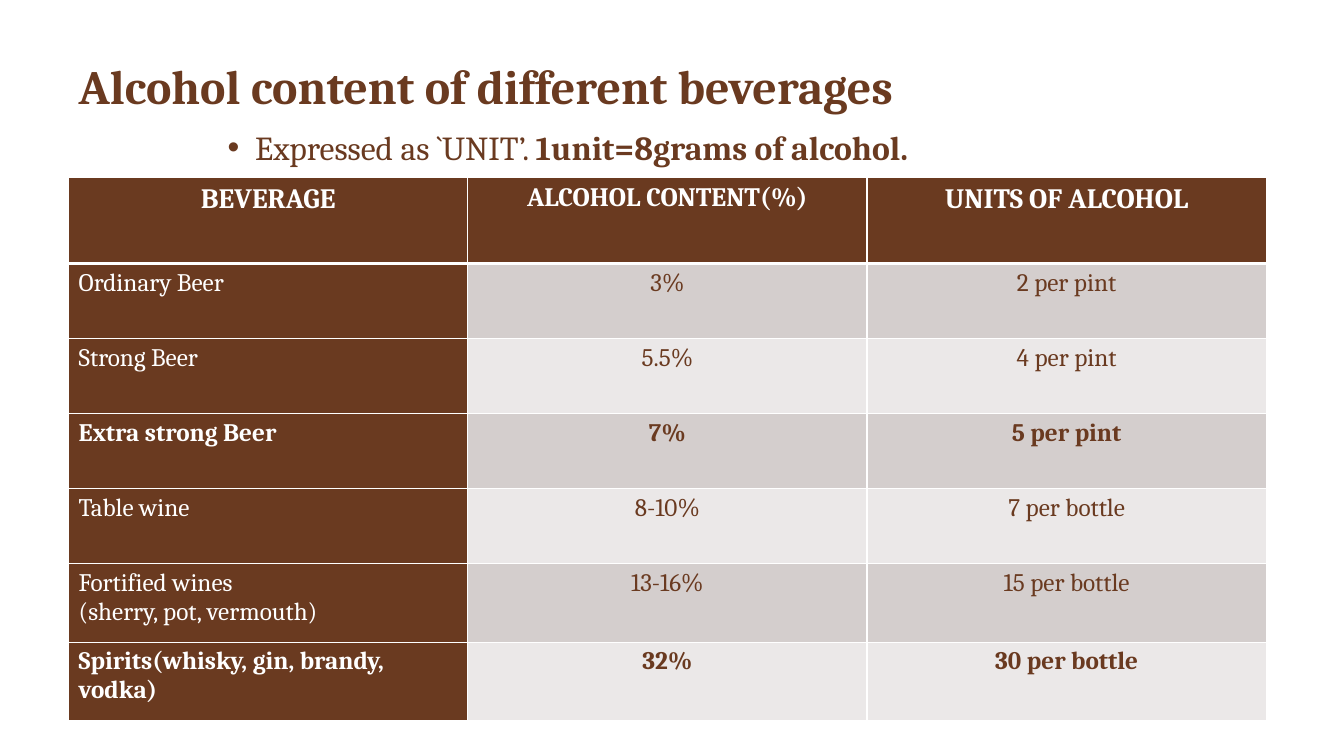
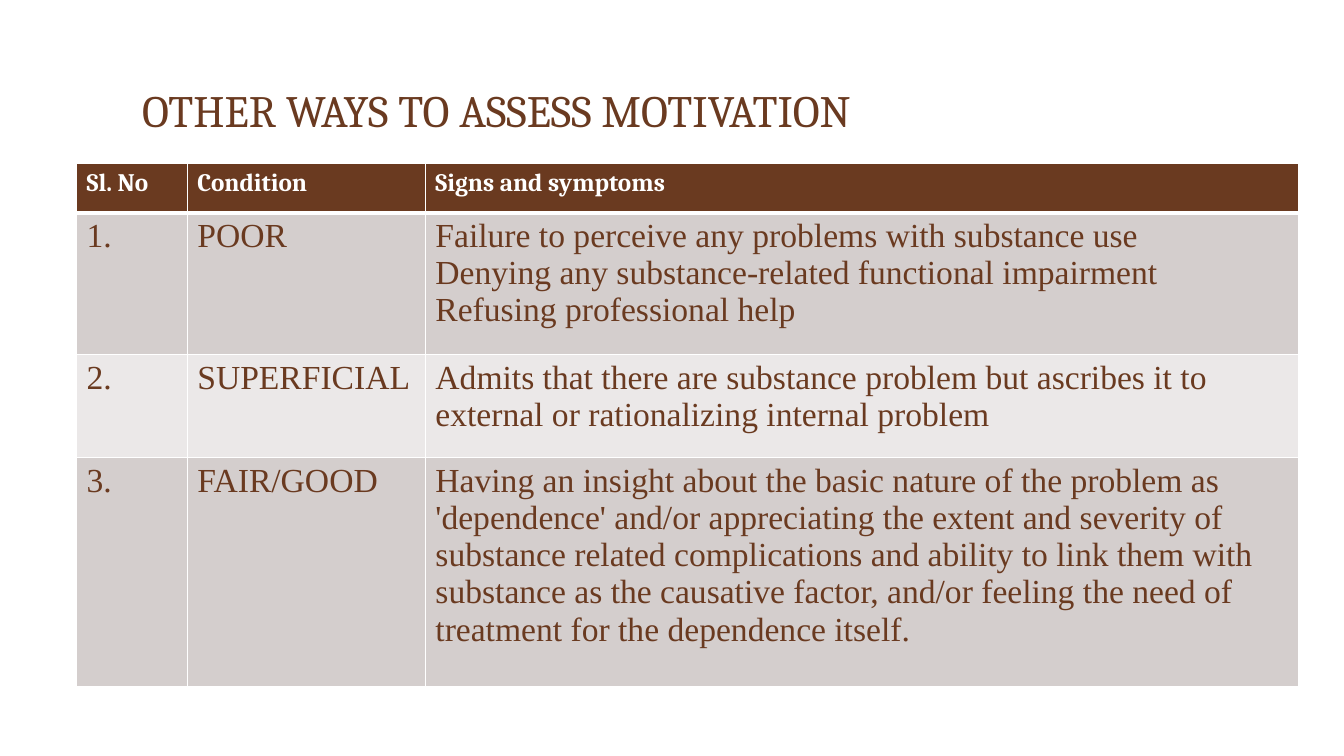
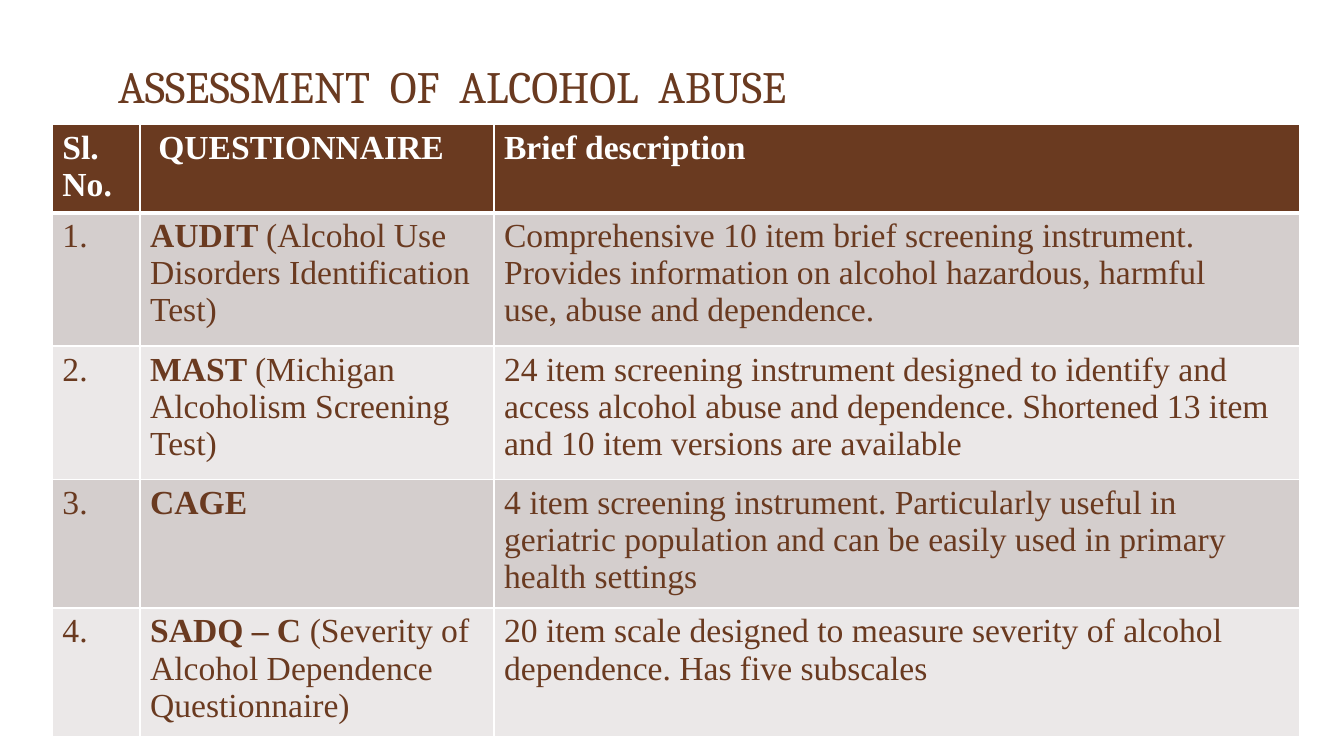
from dataclasses import dataclass

from pptx import Presentation
from pptx.dml.color import RGBColor
from pptx.enum.text import MSO_ANCHOR, MSO_AUTO_SIZE, PP_ALIGN
from pptx.oxml import parse_xml
from pptx.oxml.ns import nsdecls
from pptx.util import Cm, Pt


@dataclass(frozen=True)
class Theme:
    brown: str = "6A3A20"
    white: str = "FFFFFF"
    bands: tuple = ("D4CECD", "EBE8E8")
    serif: str = "Cambria"
    roman: str = "Times New Roman"
    title: float = 32
    bold_title: float = 34.2
    large: float = 24
    heading: float = 20
    narrow_heading: float = 19
    small: float = 18
    rule: float = 1
    header_rule: float = 3


THEME = Theme()


@dataclass(frozen=True)
class Grid:
    """Column widths and row heights in cm, and the type used in the cells."""
    columns: tuple
    heights: tuple
    head_font: str
    head_sizes: tuple
    body_font: str
    body_size: float
    brown_first_column: bool = False
    centre_head: bool = False
    centre_values: bool = False


def style(font, name, size, color, bold=False):
    font.name = name
    font.size = Pt(size)
    font.bold = bold
    font.color.rgb = RGBColor.from_string(color)


def write_marked(paragraph, text, name, size, color, bold=False):
    """Write text in which ** switches bold on and off."""
    for index, part in enumerate(text.split("**")):
        if part:
            run = paragraph.add_run()
            run.text = part
            style(run.font, name, size, color, bold or index % 2 == 1)


def place(shape, box):
    shape.left, shape.top, shape.width, shape.height = map(Cm, box)


def add_titled_slide(deck, text, box, size=THEME.title, bold=False):
    slide = deck.slides.add_slide(deck.slide_layouts[5])
    title = slide.shapes.title
    place(title, box)
    frame = title.text_frame
    frame.auto_size = MSO_AUTO_SIZE.NONE
    frame.vertical_anchor = MSO_ANCHOR.BOTTOM
    frame.text = text
    heading = frame.paragraphs[0]
    heading.alignment = PP_ALIGN.LEFT
    heading.line_spacing = 0.9
    style(heading.runs[0].font, THEME.serif, size, THEME.brown, bold)
    return slide


def add_bullet_line(slide, text, box):
    frame = slide.shapes.add_textbox(*map(Cm, box)).text_frame
    frame.word_wrap = True
    line = frame.paragraphs[0]
    line.line_spacing = 0.9
    properties = line._p.get_or_add_pPr()
    properties.set("marL", str(Cm(0.69)))
    properties.set("indent", str(-Cm(0.69)))
    for bullet in (
        f'<a:buClr {nsdecls("a")}><a:srgbClr val="{THEME.brown}"/></a:buClr>',
        f'<a:buFont {nsdecls("a")} typeface="Arial"/>',
        f'<a:buChar {nsdecls("a")} char="•"/>',
    ):
        properties.append(parse_xml(bullet))
    write_marked(line, text, THEME.serif, THEME.large, THEME.brown)


def set_borders(cell, widths):
    """Draw white borders; widths are points for left, right, top, bottom."""
    properties = cell._tc.get_or_add_tcPr()
    for index, (side, width) in enumerate(zip("LRTB", widths)):
        properties.insert(index, parse_xml(
            f'<a:ln{side} {nsdecls("a")} w="{Pt(width)}"><a:solidFill>'
            f'<a:srgbClr val="{THEME.white}"/></a:solidFill></a:ln{side}>'))


def fill_cell(cell, text, grid, row, column):
    is_head = row == 0
    is_brown = is_head or (grid.brown_first_column and column == 0)
    fill = THEME.brown if is_brown else THEME.bands[(row - 1) % 2]
    cell.fill.solid()
    cell.fill.fore_color.rgb = RGBColor.from_string(fill)
    set_borders(cell, (
        THEME.rule, THEME.rule,
        THEME.header_rule if row == 1 else THEME.rule,
        THEME.header_rule if is_head else THEME.rule))

    centred = grid.centre_head if is_head else grid.centre_values and column > 0
    frame = cell.text_frame
    for index, line in enumerate(text.split("\n")):
        paragraph = frame.add_paragraph() if index else frame.paragraphs[0]
        paragraph.alignment = PP_ALIGN.CENTER if centred else PP_ALIGN.LEFT
        write_marked(
            paragraph, line,
            grid.head_font if is_head else grid.body_font,
            grid.head_sizes[column] if is_head else grid.body_size,
            THEME.white if is_brown else THEME.brown, is_head)


def add_grid(slide, rows, grid, left, top):
    table = slide.shapes.add_table(
        len(rows), len(grid.columns), Cm(left), Cm(top),
        Cm(sum(grid.columns)), Cm(sum(grid.heights))).table
    table.horz_banding = False
    for column, width in zip(table.columns, grid.columns):
        column.width = Cm(width)
    for row, height in zip(table.rows, grid.heights):
        row.height = Cm(height)
    for row, texts in enumerate(rows):
        for column, text in enumerate(texts):
            fill_cell(table.cell(row, column), text, grid, row, column)
    return table


def build_beverages(deck):
    slide = add_titled_slide(
        deck, "Alcohol content of different beverages",
        (1.73, 0.33, 22.86, 2.69), THEME.bold_title, bold=True)
    add_bullet_line(
        slide, "Expressed as `UNIT’. **1unit=8grams of alcohol.**",
        (5.49, 3.18, 22.86, 1.2))
    rows = (
        ("BEVERAGE", "ALCOHOL CONTENT(%)", "UNITS OF ALCOHOL"),
        ("Ordinary Beer", "3%", "2 per pint"),
        ("Strong Beer", "5.5%", "4 per pint"),
        ("**Extra strong Beer**", "**7%**", "**5 per pint**"),
        ("Table wine", "8-10%", "7 per bottle"),
        ("Fortified wines\n(sherry, pot, vermouth)", "13-16%", "15 per bottle"),
        ("**Spirits(whisky, gin, brandy, vodka)**", "**32%**",
         "**30 per bottle**"),
    )
    grid = Grid(
        columns=(10.06,) * 3,
        heights=(2.16,) + (1.89,) * 4 + (1.98,) * 2,
        head_font=THEME.serif,
        head_sizes=(THEME.heading, THEME.narrow_heading, THEME.heading),
        body_font=THEME.serif, body_size=THEME.small,
        brown_first_column=True, centre_head=True, centre_values=True)
    add_grid(slide, rows, grid, 1.73, 4.48)


def build_motivation(deck):
    slide = add_titled_slide(
        deck, "OTHER WAYS TO ASSESS MOTIVATION", (3.33, 0.33, 27.08, 3.25))
    rows = (
        ("Sl. No", "Condition", "Signs and symptoms"),
        ("1.", "POOR",
         "Failure to perceive any problems with substance use\n"
         "Denying any substance-related functional impairment\n"
         "Refusing professional help"),
        ("2.", "SUPERFICIAL",
         "Admits that there are substance problem but ascribes it to "
         "external or rationalizing internal problem"),
        ("3.", "FAIR/GOOD",
         "Having an insight about the basic nature of the problem as "
         "'dependence' and/or appreciating the extent and severity of "
         "substance related complications and ability to link them with\n"
         "substance as the causative factor, and/or feeling the need of "
         "treatment for the dependence itself."),
    )
    grid = Grid(
        columns=(2.79, 6, 22.01), heights=(1.24, 3.57, 2.6, 5.77),
        head_font=THEME.serif, head_sizes=(THEME.small,) * 3,
        body_font=THEME.roman, body_size=THEME.large)
    add_grid(slide, rows, grid, 1.93, 4.12)


def build_questionnaires(deck):
    slide = add_titled_slide(
        deck, "ASSESSMENT  OF  ALCOHOL  ABUSE", (2.72, -0.28, 27.08, 3.25))
    rows = (
        ("Sl. No.", "QUESTIONNAIRE", "Brief description"),
        ("1.",
         "**AUDIT **(Alcohol Use\nDisorders Identification Test)",
         "Comprehensive 10 item brief screening instrument.\n"
         "Provides information on alcohol hazardous, harmful\n"
         "use, abuse and dependence."),
        ("2.", "**MAST **(Michigan Alcoholism Screening Test)",
         "24 item screening instrument designed to identify and access "
         "alcohol abuse and dependence. Shortened 13 item and 10 item "
         "versions are available"),
        ("3.", "**CAGE**",
         "4 item screening instrument. Particularly useful in\n"
         "geriatric population and can be easily used in primary "
         "health settings"),
        ("4.",
         "**SADQ – C **(Severity of\nAlcohol Dependence\nQuestionnaire)",
         "20 item scale designed to measure severity of alcohol\n"
         "dependence. Has five subscales"),
    )
    grid = Grid(
        columns=(2.21, 8.92, 20.29), heights=(2.22, 3.36, 3.36, 3.24, 3.24),
        head_font=THEME.roman, head_sizes=(THEME.large,) * 3,
        body_font=THEME.roman, body_size=THEME.large)
    table = add_grid(slide, rows, grid, 1.32, 3.14)
    # Heading set in slightly from the column's text
    table.cell(0, 1).margin_left = Cm(0.46)


def main():
    deck = Presentation()
    deck.slide_width, deck.slide_height = Cm(33.87), Cm(19.05)
    build_beverages(deck)
    build_motivation(deck)
    build_questionnaires(deck)
    deck.save("out.pptx")


if __name__ == "__main__":
    main()
